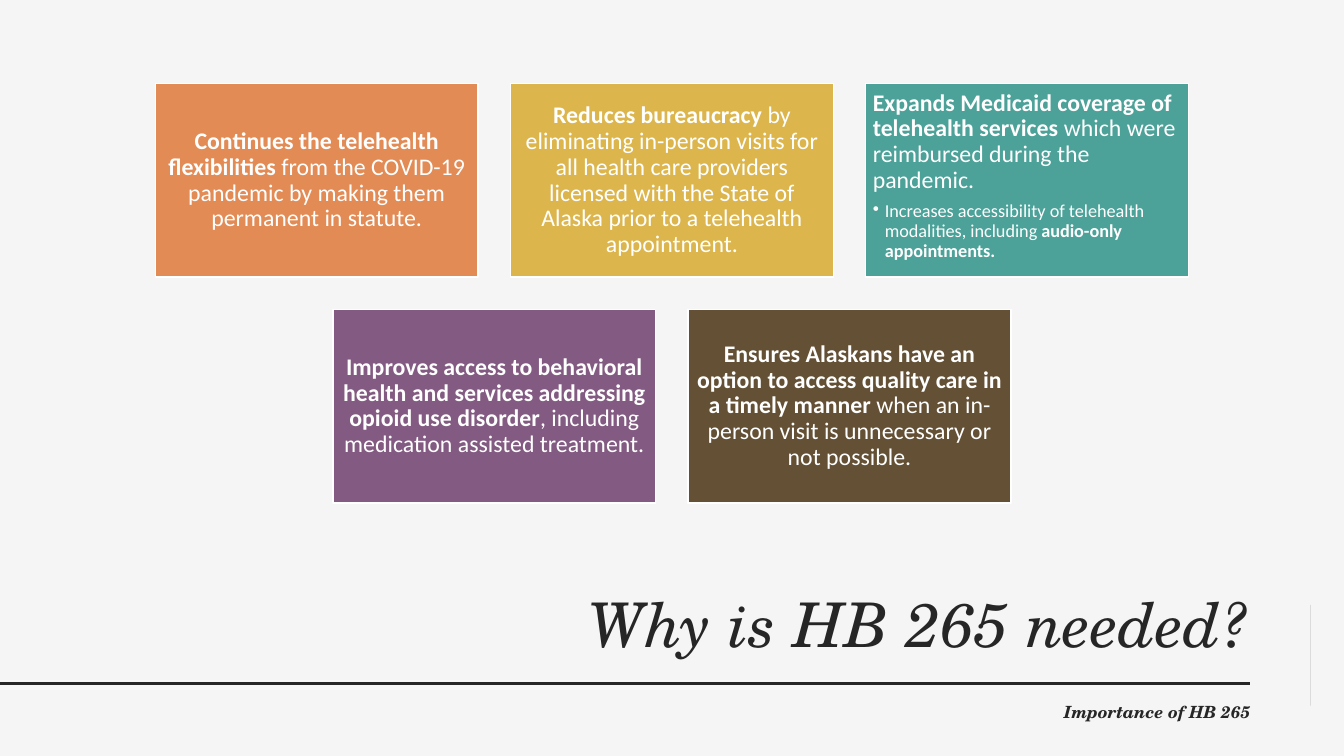
import math
from lxml import etree
from pptx import Presentation
from pptx import util as u
from pptx.dml.color import RGBColor
from pptx.enum import shapes, text
from pptx.oxml.ns import qn

WIDTH, HEIGHT = 13.33, 7.5
INK, PAPER, WHITE = "262626", "F5F5F5", "FFFFFF"
SERIF, SANS = "TeX Gyre Schola", "Calibri"
LEFT, CENTER, RIGHT = (text.PP_ALIGN.LEFT, text.PP_ALIGN.CENTER,
                       text.PP_ALIGN.RIGHT)
TOP, MIDDLE = text.MSO_ANCHOR.TOP, text.MSO_ANCHOR.MIDDLE
RULE_Y, RULE_END = 6.78, 12.4

# Each benefit: fill, then paragraphs of (wording, bold) runs; any after the first is a bullet
BENEFIT_ROWS = [
    [
        ("E28B55", [[("Continues the telehealth flexibilities ", True),
                     ("from the COVID-19 pandemic by making them permanent in statute.", False)]]),
        ("DCB64D", [[("Reduces bureaucracy ", True),
                     ("by eliminating in-person visits for all health care providers licensed "
                      "with the State of Alaska prior to a telehealth appointment.", False)]]),
        ("4CA198", [[("Expands Medicaid coverage of telehealth services ", True),
                     ("which were reimbursed during the pandemic.", False)],
                    [("Increases accessibility of telehealth modalities, including ", False),
                     ("audio-only appointments.", True)]]),
    ],
    [
        ("835B82", [[("Improves access to behavioral health and services addressing "
                      "opioid use disorder", True),
                     (", including medication assisted treatment.", False)]]),
        ("645135", [[("Ensures Alaskans have an option to access quality care in a timely "
                      "manner ", True),
                     ("when an in-person visit is unnecessary or not possible.", False)]]),
    ],
]


def color(value):
    return RGBColor.from_string(value)


def apply(target, formats):
    for name, value in formats.items():
        setattr(target, name, value)


def inches(*lengths):
    return [u.Inches(length) for length in lengths]


def add_run(paragraph, wording, ink, **font):
    run = paragraph.add_run()
    run.text = wording
    apply(run.font, font)
    run.font.color.rgb = color(ink)


def paint(shape, fill):
    shape.shadow.inherit = False
    shape.fill.solid()
    shape.fill.fore_color.rgb = color(fill)


def add_bullet(paragraph, indent):
    properties = paragraph._p.get_or_add_pPr()
    properties.set("marL", str(u.Inches(indent)))
    properties.set("indent", str(-u.Inches(indent)))
    etree.SubElement(properties, qn("a:buChar")).set("char", "•")


def add_caption(slide, box, wording, anchor, **font):
    caption = slide.shapes.add_textbox(*inches(*box)).text_frame
    apply(caption, {"word_wrap": True, "vertical_anchor": anchor})
    paragraph = caption.paragraphs[0]
    paragraph.alignment = RIGHT
    add_run(paragraph, wording, name=SERIF, size=u.Pt(12), italic=True, **font)


def add_benefit(slide, box, fill, paragraphs):
    card = slide.shapes.add_shape(shapes.MSO_SHAPE.RECTANGLE, *inches(*box))
    paint(card, fill)
    card.line.color.rgb = color(WHITE)
    card.line.width = u.Pt(1)
    has_bullets = len(paragraphs) > 1
    frame = card.text_frame
    apply(frame, {"word_wrap": True, "vertical_anchor": TOP if has_bullets else MIDDLE})
    apply(frame, {f"margin_{side}": u.Inches(0.07)
                  for side in ("left", "top", "right", "bottom")})
    for index, runs in enumerate(paragraphs):
        paragraph = frame.add_paragraph() if index else frame.paragraphs[0]
        size, after = (13, 2) if index else (17, 6)
        apply(paragraph, {"alignment": LEFT if has_bullets else CENTER,
                          "line_spacing": 0.9, "space_after": u.Pt(after)})
        if index:
            paragraph.level = 1
            add_bullet(paragraph, 0.12)
        for wording, bold in runs:
            add_run(paragraph, wording, WHITE, name=SANS, size=u.Pt(size), bold=bold)


def add_benefits(slide, box):
    """Fill the box with rows of equal cards, each row centred."""
    left, top, width, height = box
    gap = 0.32
    columns = max(len(row) for row in BENEFIT_ROWS)
    card_width = (width - gap * (columns - 1)) / columns
    card_height = (height - gap * (len(BENEFIT_ROWS) - 1)) / len(BENEFIT_ROWS)
    for row_index, row in enumerate(BENEFIT_ROWS):
        indent = (columns - len(row)) * (card_width + gap) / 2
        for column, (fill, paragraphs) in enumerate(row):
            add_benefit(slide, (left + indent + column * (card_width + gap),
                                top + row_index * (card_height + gap),
                                card_width, card_height), fill, paragraphs)


def add_title(slide, box):
    title = slide.shapes.title
    apply(title, dict(zip(("left", "top", "width", "height"), inches(*box))))
    apply(title.text_frame, {"word_wrap": True, "vertical_anchor": MIDDLE})
    paragraph = title.text_frame.paragraphs[0]
    apply(paragraph, {"alignment": RIGHT, "line_spacing": 0.9})
    add_run(paragraph, "Why is HB 265 needed?", INK, name=SERIF, size=u.Pt(44), italic=True)


def add_rule(slide):
    rule = slide.shapes.add_connector(shapes.MSO_CONNECTOR.STRAIGHT,
                                      *inches(0, RULE_Y, RULE_END, RULE_Y))
    rule.line.color.rgb = color(INK)
    rule.line.width = u.Pt(2)
    etree.SubElement(rule._element.spPr, qn("a:effectLst"))


def add_page_tab(slide, box):
    """Half disc against the right edge of the box, with the page number."""
    left, top, radius, height = box
    middle = top + height / 2
    steps = 48
    arc = [(left + radius - radius * math.sin(math.pi * step / steps),
            middle - radius * math.cos(math.pi * step / steps))
           for step in range(steps + 1)]
    builder = slide.shapes.build_freeform(*arc[0], scale=u.Inches(1))
    builder.add_line_segments(arc[1:], close=True)
    tab = builder.convert_to_shape()
    paint(tab, INK)
    tab.line.fill.background()
    add_caption(slide, (left, middle - 0.2, radius, 0.4), "5", MIDDLE, ink=PAPER)


def main():
    deck = Presentation()
    deck.slide_width, deck.slide_height = inches(WIDTH, HEIGHT)
    slide = deck.slides.add_slide(deck.slide_layouts[5])
    slide.background.fill.solid()
    slide.background.fill.fore_color.rgb = color(PAPER)
    add_title(slide, (0.82, 5.72, 11.67, 1.02))
    add_rule(slide)
    add_page_tab(slide, (WIDTH - 0.45, RULE_Y - 0.9, 0.45, 0.9))
    add_caption(slide, (4.81, 6.91, 7.69, 0.4), "Importance of HB 265", TOP,
                ink=INK, bold=True)
    add_benefits(slide, (1.54, 0.83, 10.25, 4.16))
    deck.save("out.pptx")


if __name__ == "__main__":
    main()
